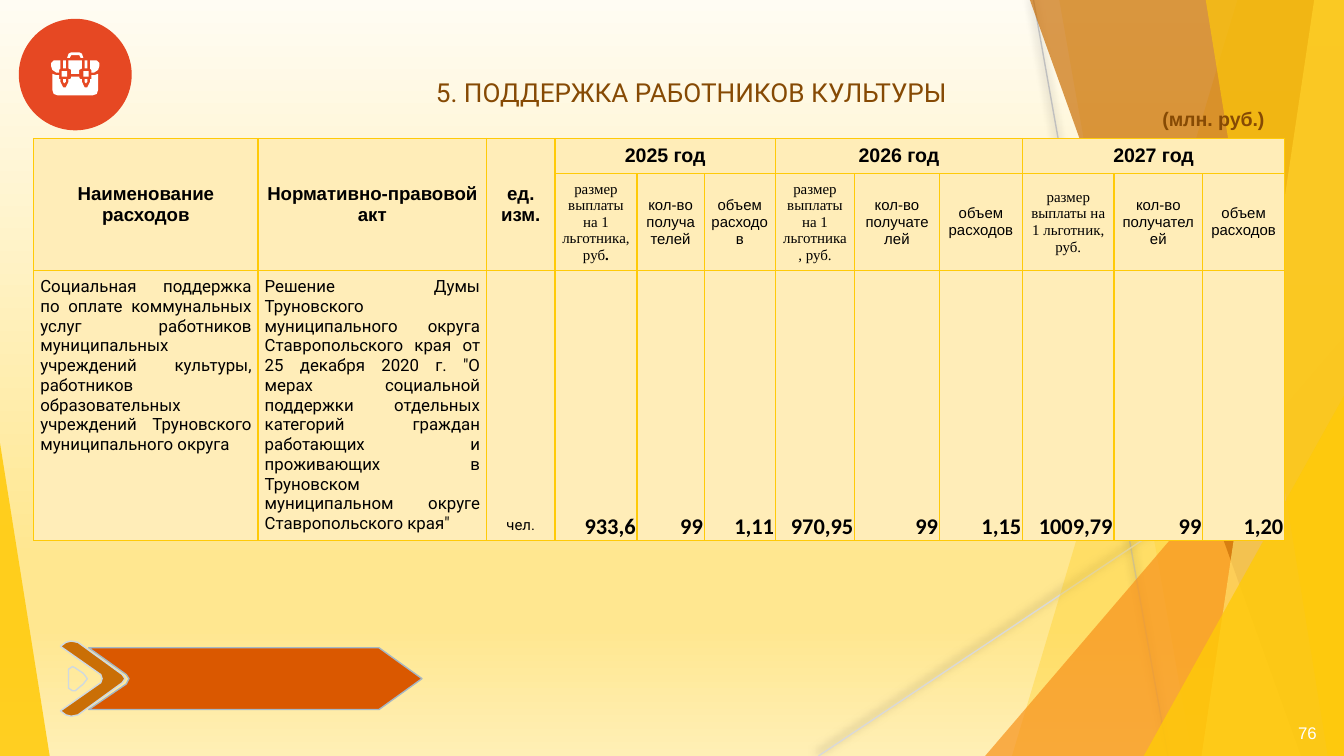
from dataclasses import dataclass

from lxml.etree import SubElement
from pptx import Presentation
from pptx.dml.color import RGBColor
from pptx.enum.shapes import MSO_CONNECTOR, MSO_SHAPE
from pptx.enum.text import MSO_ANCHOR, PP_ALIGN
from pptx.oxml.ns import qn
from pptx.util import Inches, Pt


@dataclass(frozen=True)
class Theme:
    gold = "FFCA08"
    pale_gold = "FFDF6B"
    orange = "F8931D"
    brown = "CA6F06"
    dark_brown = "864A04"
    red = "E64823"
    arrow = "DA5800"
    white = "FFFFFF"
    black = "000000"
    cell = "FFEDB8"
    background = ((0, "FFFCF3"), (74, "FFE790"), (83, "FFE790"), (100, "FFEFB5"))
    title_size = 14
    value_size = 12
    year_size = 10.5
    header_size = 10
    body_size = 9
    small_size = 8


THEME = Theme()

SLIDE_WIDTH = 10
SLIDE_HEIGHT = SLIDE_WIDTH * 9 / 16
COLUMN_WIDTHS = (1.67, 1.7, 0.51, 0.61, 0.5, 0.53, 0.59, 0.63, 0.62, 0.68, 0.66, 0.61)
ROW_HEIGHTS = (0.26, 0.72, 2.01)
HEADINGS = ("Наименование расходов", "Нормативно-правовой акт", "ед. изм.")
YEARS = (
    ("2025 год", "размер выплаты на 1 льготника, руб", ("933,6", "99", "1,11")),
    ("2026 год", "размер выплаты на 1 льготника, руб.", ("970,95", "99", "1,15")),
    ("2027 год", "размер выплаты на 1 льготник, руб.", ("1009,79", "99", "1,20")),
)
SUPPORT = (
    "Социальная поддержка по оплате коммунальных услуг работников муниципальных "
    "учреждений культуры, работников образовательных учреждений Труновского "
    "муниципального округа"
)
LEGAL_ACT = (
    "Решение Думы Труновского муниципального округа Ставропольского края от "
    '25 декабря 2020 г. "О мерах социальной поддержки отдельных категорий граждан '
    "работающих и проживающих в Труновском муниципальном округе Ставропольского края\""
)


def add_color(parent, color, opacity=100):
    element = SubElement(parent, qn("a:srgbClr"), val=color)
    if opacity < 100:
        SubElement(element, qn("a:alpha"), val=str(opacity * 1000))


def add_vertical_gradient(parent, stops):
    gradient = SubElement(parent, qn("a:gradFill"), rotWithShape="1")
    stop_list = SubElement(gradient, qn("a:gsLst"))
    for position, color in stops:
        add_color(SubElement(stop_list, qn("a:gs"), pos=str(position * 1000)), color)
    SubElement(gradient, qn("a:lin"), ang="5400000", scaled="0")
    return gradient


def paint(shape, fill=None, line=None, opacity=100):
    shape.shadow.inherit = False
    if fill:
        shape.fill.solid()
        shape.fill.fore_color.rgb = RGBColor.from_string(fill)
        if opacity < 100:
            color = shape.fill._xPr.find(".//" + qn("a:srgbClr"))
            SubElement(color, qn("a:alpha"), val=str(opacity * 1000))
    else:
        shape.fill.background()
    if line:
        shape.line.color.rgb = RGBColor.from_string(line)
        shape.line.width = Pt(0.75)
    else:
        shape.line.fill.background()


def add_outline(slide, left, top, contours, **style):
    """Draw closed contours, given in inches from left and top, as one freeform."""
    placed = [[(Inches(left + x), Inches(top + y)) for x, y in contour] for contour in contours]
    builder = slide.shapes.build_freeform(*placed[0][0])
    for index, contour in enumerate(placed):
        if index:
            builder.move_to(*contour[0])
        builder.add_line_segments(contour[1:], close=True)
    paint(builder.convert_to_shape(), **style)


def mirror(points):
    return [(-x, y) for x, y in reversed(points)]


def style_text(paragraph, size, font, color, bold=False, align=PP_ALIGN.LEFT):
    paragraph.alignment = align
    paragraph.font.size = Pt(size)
    paragraph.font.name = font
    paragraph.font.bold = bold
    paragraph.font.color.rgb = RGBColor.from_string(color)


def add_text(slide, left, top, width, height, text, size, font, color, inset=None, wrap=True, **style):
    box = slide.shapes.add_textbox(Inches(left), Inches(top), Inches(width), Inches(height))
    frame = box.text_frame
    frame.word_wrap = wrap
    if inset is not None:
        frame.margin_left = frame.margin_right = Inches(inset)
        frame.margin_top = frame.margin_bottom = Inches(inset)
    paragraph = frame.paragraphs[0]
    paragraph.text = text
    style_text(paragraph, size, font, color, **style)


def add_shadowed_line(slide, start, end, color):
    points = [Inches(value) for value in (*start, *end)]
    line = slide.shapes.add_connector(MSO_CONNECTOR.STRAIGHT, *points)
    line.line.color.rgb = RGBColor.from_string(color)
    line.line.width = Pt(0.75)
    effects = SubElement(line._element.spPr, qn("a:effectLst"))
    shadow = SubElement(effects, qn("a:outerShdw"), blurRad=str(Pt(5)), dist=str(Pt(2)),
                        dir=str(245 * 60000), rotWithShape="0")
    add_color(shadow, THEME.black, 50)


def add_triangle(slide, left, top, width, height, apex, color, opacity):
    box = [Inches(value) for value in (left, top, width, height)]
    triangle = slide.shapes.add_shape(MSO_SHAPE.ISOSCELES_TRIANGLE, *box)
    triangle.adjustments[0] = apex
    paint(triangle, fill=color, opacity=opacity)


def add_backdrop(slide, width, height):
    slide.background.fill.solid()
    properties = slide.element.find(".//" + qn("p:bgPr"))
    properties.replace(properties[0], add_vertical_gradient(properties, THEME.background))

    add_shadowed_line(slide, (7.69, 0), (8.69, height), "BFBFBF")
    add_shadowed_line(slide, (width, 3.02), (6.09, height), "D9D9D9")

    def add_band(top_x, bottom_x, color, opacity):
        corners = [(top_x, -0.01), (width, -0.01), (width, height), (bottom_x, height)]
        add_outline(slide, 0, 0, [corners], fill=color, opacity=opacity)

    add_band(9.21, 7.53, THEME.gold, 30)
    add_band(7.88, 8.87, THEME.gold, 20)
    add_triangle(slide, width - 2.67, height - 3.12, 2.67, 3.12, 1, THEME.orange, 72)
    add_band(7.66, 9.68, THEME.brown, 70)
    add_band(9.78, 8.94, THEME.pale_gold, 70)
    add_band(8.97, 9.88, THEME.gold, 65)
    add_triangle(slide, width - 1.49, height - 2.68, 1.49, 2.68, 1, THEME.gold, 80)
    add_triangle(slide, 0, height - 2.33, 0.37, 2.33, 0, THEME.gold, 85)


def fill_cell(cell, text, size, font="Arial", bold=False, align=PP_ALIGN.CENTER,
              anchor=MSO_ANCHOR.MIDDLE, inset=0.05):
    cell.margin_left = cell.margin_right = cell.margin_top = Inches(inset)
    cell.margin_bottom = Inches(inset if inset > 0.01 else 0)
    cell.vertical_anchor = anchor
    paragraph = cell.text_frame.paragraphs[0]
    paragraph.text = text
    style_text(paragraph, size, font, THEME.black, bold, align)


def add_support_table(slide, left, top):
    frame = slide.shapes.add_table(
        len(ROW_HEIGHTS), len(COLUMN_WIDTHS), Inches(left), Inches(top),
        Inches(sum(COLUMN_WIDTHS)), Inches(sum(ROW_HEIGHTS)))
    table = frame.table
    table.first_row = table.horz_banding = False
    for column, width in zip(table.columns, COLUMN_WIDTHS):
        column.width = Inches(width)
    for row, height in zip(table.rows, ROW_HEIGHTS):
        row.height = Inches(height)
    for cell in table.iter_cells():
        properties = cell._tc.get_or_add_tcPr()
        for side in ("a:lnL", "a:lnR", "a:lnT", "a:lnB"):
            border = SubElement(properties, qn(side), w=str(Pt(0.75)))
            add_color(SubElement(border, qn("a:solidFill")), THEME.gold)
        cell.fill.solid()
        cell.fill.fore_color.rgb = RGBColor.from_string(THEME.cell)

    for index, heading in enumerate(HEADINGS):
        table.cell(0, index).merge(table.cell(1, index))
        fill_cell(table.cell(0, index), heading, THEME.header_size, bold=True)
    for index, text in enumerate((SUPPORT, LEGAL_ACT)):
        fill_cell(table.cell(2, index), text, THEME.body_size, "Roboto",
                  align=PP_ALIGN.JUSTIFY, anchor=MSO_ANCHOR.TOP)
    fill_cell(table.cell(2, 2), "чел.", THEME.small_size, "Roboto", anchor=MSO_ANCHOR.BOTTOM)

    for index, (year, payment, values) in enumerate(YEARS):
        first = len(HEADINGS) + 3 * index
        table.cell(0, first).merge(table.cell(0, first + 2))
        fill_cell(table.cell(0, first), year, THEME.year_size, bold=True, anchor=MSO_ANCHOR.BOTTOM)
        labels = (payment, "кол-во получателей", "объем расходов")
        for offset, (label, value) in enumerate(zip(labels, values)):
            font = "Arial" if offset else "Times New Roman"
            fill_cell(table.cell(1, first + offset), label, THEME.small_size, font)
            fill_cell(table.cell(2, first + offset), value, THEME.value_size, "Calibri", True,
                      PP_ALIGN.RIGHT, MSO_ANCHOR.BOTTOM, 0.01)
    period = table.cell(1, len(HEADINGS)).text_frame.paragraphs[0].add_run()
    period.text = "."
    period.font.bold = True


def add_briefcase_badge(slide, left, top, width, height):
    box = [Inches(value) for value in (left, top, width, height)]
    paint(slide.shapes.add_shape(MSO_SHAPE.OVAL, *box), fill=THEME.red)
    center = left + width / 2
    body = [(0, 0.43), (0.03, 0.43), (0.03, 0.44), (0.04, 0.45), (0.05, 0.45), (0.05, 0.47),
            (0.07, 0.51), (0.09, 0.51), (0.11, 0.47), (0.11, 0.45), (0.12, 0.45), (0.12, 0.42),
            (0.14, 0.42), (0.17, 0.41), (0.17, 0.53), (0.16, 0.56), (0.13, 0.57), (0, 0.57)]
    flap = [(0, 0.31), (0.05, 0.31), (0.05, 0.37), (0.03, 0.38), (0.03, 0.41), (0, 0.41)]
    handle = [(0, 0.25), (0.03, 0.25), (0.05, 0.26), (0.06, 0.29), (0.04, 0.29), (0.03, 0.27),
              (0, 0.27)]
    pocket = [(0.11, 0.31), (0.16, 0.31), (0.18, 0.33), (0.18, 0.35), (0.17, 0.38), (0.14, 0.4),
              (0.12, 0.4), (0.12, 0.38), (0.11, 0.37)]
    strap = [[(-0.01, 0.31), (0.01, 0.31), (0.01, 0.37), (-0.01, 0.37)],
             [(-0.02, 0.39), (0.02, 0.39), (0.02, 0.43), (-0.02, 0.43)],
             [(-0.01, 0.45), (0.01, 0.45), (0.01, 0.47), (0, 0.48), (-0.01, 0.47)]]
    for half in (body, flap, handle):
        add_outline(slide, center, top, [half + mirror(half)], fill=THEME.white)
    for side in (pocket, mirror(pocket)):
        add_outline(slide, center, top, [side], fill=THEME.white)
    for shift in (-0.08, 0.08):
        add_outline(slide, center + shift, top, strap, fill=THEME.white)


def add_arrow_banner(slide, left, top):
    chevron = [(0.08, 0), (0.04, 0.01), (0, 0.04), (0.3, 0.25), (0.31, 0.28), (0.3, 0.31),
               (0, 0.52), (0.04, 0.55), (0.08, 0.56), (0.13, 0.55), (0.46, 0.31), (0.48, 0.28),
               (0.46, 0.25), (0.13, 0.01)]
    pointer = [(0.09, 0.19), (0.06, 0.21), (0.06, 0.35), (0.09, 0.37), (0.11, 0.37),
               (0.17, 0.32), (0.2, 0.28), (0.17, 0.24), (0.11, 0.2)]
    banner = [(0.21, 0.05), (0.49, 0.25), (0.51, 0.28), (0.49, 0.32), (0.21, 0.51),
              (2.37, 0.51), (2.69, 0.28), (2.37, 0.05)]
    add_outline(slide, left, top, [chevron], fill=THEME.brown, line="CFD9E0")
    add_outline(slide, left, top, [pointer], line="CFD9E0")
    add_outline(slide, left, top, [banner], fill=THEME.arrow, line="A5B7C5")


def main():
    presentation = Presentation()
    presentation.slide_width = Inches(SLIDE_WIDTH)
    presentation.slide_height = Inches(SLIDE_HEIGHT)
    slide = presentation.slides.add_slide(presentation.slide_layouts[6])
    add_backdrop(slide, SLIDE_WIDTH, SLIDE_HEIGHT)
    add_support_table(slide, 0.25, 1.03)
    add_briefcase_badge(slide, 0.14, 0.14, 0.84, 0.83)
    add_text(slide, 8.55, 0.75, 1.01, 0.29, "(млн. руб.)", THEME.year_size, "Arial",
             THEME.dark_brown, wrap=False, bold=True)
    add_text(slide, 9.56, 5.33, 0.38, 0.24, "76", THEME.body_size, "Arial", THEME.white)
    add_text(slide, 1.2, 0.47, 7.89, 0.39, "5. ПОДДЕРЖКА РАБОТНИКОВ КУЛЬТУРЫ", THEME.title_size,
             "Roboto", THEME.dark_brown, inset=0.1, align=PP_ALIGN.CENTER)
    add_arrow_banner(slide, 0.45, 4.77)
    presentation.save("out.pptx")


if __name__ == "__main__":
    main()
